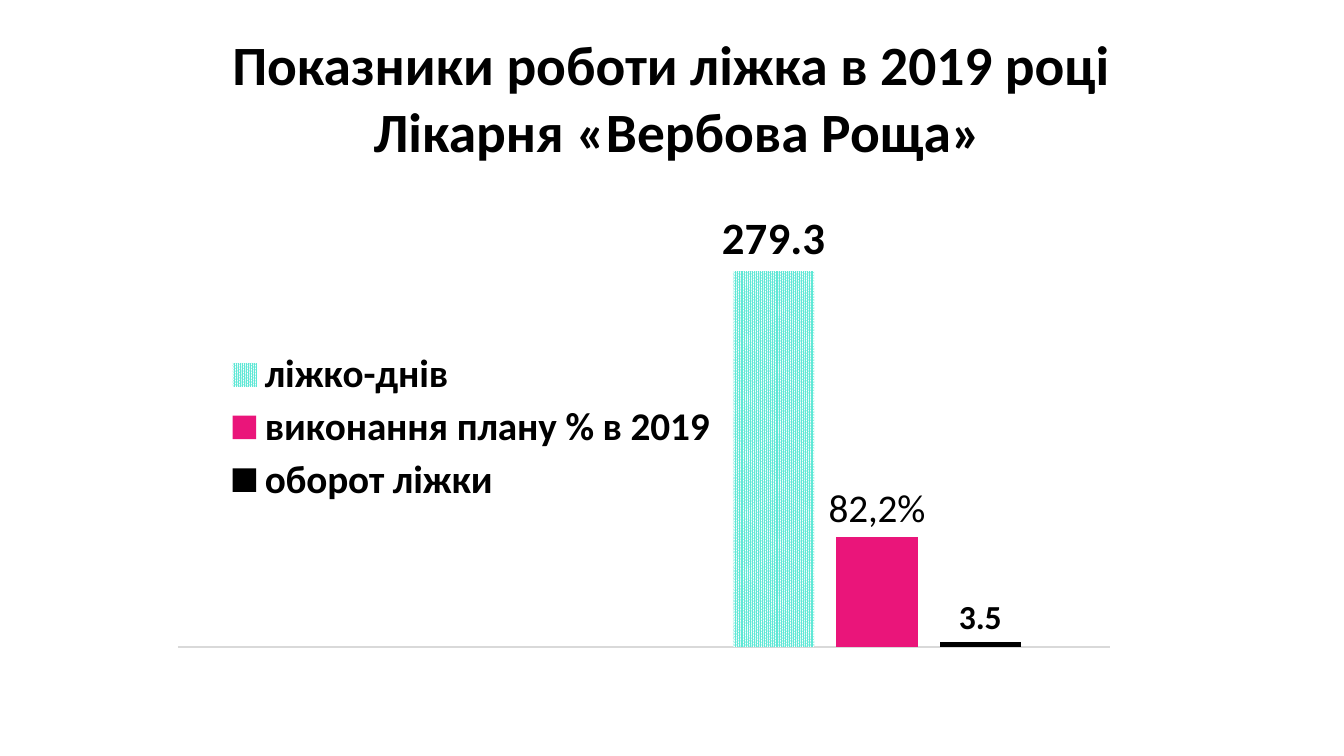
from lxml.etree import SubElement
from pptx import Presentation
from pptx.chart.data import CategoryChartData
from pptx.dml.color import RGBColor
from pptx.enum.chart import (XL_CHART_TYPE, XL_LABEL_POSITION, XL_LEGEND_POSITION,
                             XL_TICK_LABEL_POSITION, XL_TICK_MARK)
from pptx.enum.dml import MSO_PATTERN
from pptx.enum.text import MSO_ANCHOR, MSO_AUTO_SIZE, PP_ALIGN
from pptx.oxml.ns import qn
from pptx.util import Inches, Pt

COLORS = {
    "text": "000000",
    "paper": "FFFFFF",
    "bed_days": "5FE8D6",
    "plan": "EA157A",
    "turnover": "000000",
    "axis": "D9D9D9",
}
INDICATORS = [
    ("ліжко-днів", 279.3, "bed_days", 32),
    ("виконання плану % в 2019", 82.2, "plan", 28),
    ("оборот ліжки", 3.5, "turnover", 24),
]


class SlideBuilder:
    font_name = "Calibri"

    def __init__(self, presentation):
        self.slide = presentation.slides.add_slide(presentation.slide_layouts[5])

    def color(self, name):
        return RGBColor.from_string(COLORS[name])

    def style(self, font, size, bold=False):
        font.name = self.font_name
        font.size = Pt(size)
        font.bold = bold
        font.color.rgb = self.color("text")

    def title(self, text, left, top, width, height):
        shape = self.slide.shapes.title
        shape.left, shape.top = Inches(left), Inches(top)
        shape.width, shape.height = Inches(width), Inches(height)
        frame = shape.text_frame
        frame.text = text
        frame.auto_size = MSO_AUTO_SIZE.NONE
        frame.vertical_anchor = MSO_ANCHOR.MIDDLE
        paragraph = frame.paragraphs[0]
        paragraph.alignment = PP_ALIGN.CENTER
        self.style(paragraph.font, 39.6, True)

    def column_chart(self, indicators, left, top, width, height):
        data = CategoryChartData()
        data.categories = ["1", "2"]
        for name, value, _, _ in indicators:
            data.add_series(name, [None, value])
        chart = self.slide.shapes.add_chart(
            XL_CHART_TYPE.COLUMN_CLUSTERED, Inches(left), Inches(top),
            Inches(width), Inches(height), data).chart
        chart.has_title = False
        self.style(chart.font, 10)
        plot = chart.plots[0]
        plot.gap_width, plot.overlap = 219, -27
        plot.vary_by_categories = False
        for series, (_, _, color, size) in zip(plot.series, indicators):
            series.format.fill.solid()
            series.format.fill.fore_color.rgb = self.color(color)
            series.invert_if_negative = False
            labels = series.data_labels
            labels.show_value = True
            labels.position = XL_LABEL_POSITION.OUTSIDE_END
            self.style(labels.font, size, True)
        self.axes(chart)
        return chart

    def axes(self, chart):
        category_axis = chart.category_axis
        category_axis.tick_label_position = XL_TICK_LABEL_POSITION.NONE
        category_axis.major_tick_mark = XL_TICK_MARK.NONE
        category_axis.format.line.color.rgb = self.color("axis")
        category_axis.format.line.width = Pt(1)
        value_axis = chart.value_axis
        value_axis.minimum_scale, value_axis.maximum_scale = 0, 300
        value_axis.has_major_gridlines = False
        value_axis.visible = False

    def legend(self, chart, size):
        chart.has_legend = True
        chart.legend.position = XL_LEGEND_POSITION.BOTTOM
        chart.legend.include_in_layout = False
        self.style(chart.legend.font, size, True)

    def pattern(self, series, color):
        fill = series.format.fill
        fill.patterned()
        fill.pattern = MSO_PATTERN.PERCENT_90
        fill.fore_color.rgb = self.color(color)
        fill.back_color.rgb = self.color("paper")

    def point_label(self, series, index, text, size):
        label = series.points[index].data_label
        run = label.text_frame.paragraphs[0].add_run()
        run.text = text
        self.style(run.font, size)
        label.position = XL_LABEL_POSITION.OUTSIDE_END

    def place(self, element, index, x, y, w, h, inner=False):
        for layout in element.findall(qn("c:layout")):
            element.remove(layout)
        layout = SubElement(element, qn("c:layout"))
        element.insert(index, layout)
        manual = SubElement(layout, qn("c:manualLayout"))
        settings = [("layoutTarget", "inner")] if inner else []
        settings += [("xMode", "edge"), ("yMode", "edge"),
                     ("x", x), ("y", y), ("w", w), ("h", h)]
        for tag, value in settings:
            SubElement(manual, qn(f"c:{tag}")).set("val", str(value))


def main():
    presentation = Presentation()
    presentation.slide_width, presentation.slide_height = Inches(13.33), Inches(7.5)
    builder = SlideBuilder(presentation)
    builder.title("Показники роботи ліжка в 2019 році \vЛікарня «Вербова Роща»",
                  1.22, 0.52, 11, 0.88)
    chart = builder.column_chart(INDICATORS, 1.67, 1.96, 9.53, 5.07)
    bed_days, plan, _ = chart.plots[0].series
    builder.pattern(bed_days, "bed_days")
    builder.point_label(plan, 1, "82,2%", 28)
    builder.legend(chart, 28)
    plot_area = chart.plots[0]._element.getparent()
    builder.place(plot_area, 0, 0.01, 0.09, 0.97, 0.79, inner=True)
    builder.place(chart.legend._element, 1, 0.05, 0.29, 0.53, 0.32)
    presentation.save("out.pptx")


if __name__ == "__main__":
    main()
